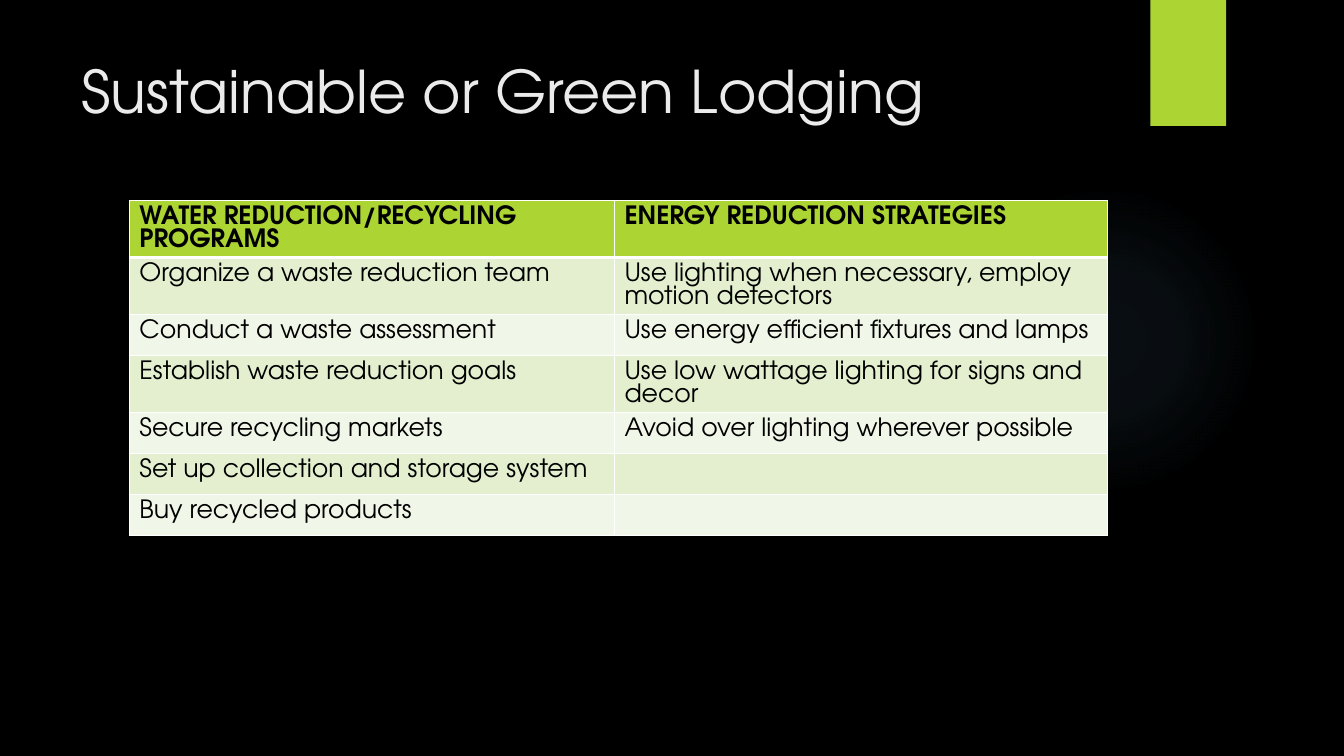
import pptx
import pptx.dml.color
import pptx.enum.shapes
import pptx.enum.text
import pptx.oxml
import pptx.oxml.ns
import pptx.util

Pt = pptx.util.Pt
FONT = "TeX Gyre Adventor"
LIME = "ACD433"
BANDS = ("E3EFCE", "F1F7E8")
GLOW_STOPS = ((0, 7), (36, 6), (69, 0))  # position and opacity, in percent
NAMESPACE = pptx.oxml.ns.nsdecls("a")

STRATEGIES = (
    ("WATER REDUCTION/RECYCLING PROGRAMS", "ENERGY REDUCTION STRATEGIES"),
    ("Organize a waste reduction team",
     "Use lighting when necessary, employ motion detectors"),
    ("Conduct a waste assessment", "Use energy efficient fixtures and lamps"),
    ("Establish waste reduction goals",
     "Use low wattage lighting for signs and decor"),
    ("Secure recycling markets", "Avoid over lighting wherever possible"),
    ("Set up collection and storage system", ""),
    ("Buy recycled products", ""),
)


def color(value):
    return pptx.dml.color.RGBColor.from_string(value)


def set_fill(item, value):
    item.fill.solid()
    item.fill.fore_color.rgb = color(value)


def add_text(paragraph, text, size, value, bold=False):
    run = paragraph.add_run()
    run.text = text
    run.font.name = FONT
    run.font.size = Pt(size)
    run.font.bold = bold
    run.font.color.rgb = color(value)


def add_shape(slide, kind, left, top, width, height, value):
    shape = slide.shapes.add_shape(kind, Pt(left), Pt(top), Pt(width), Pt(height))
    shape.shadow.inherit = False
    shape.line.fill.background()
    set_fill(shape, value)
    return shape


def add_glow(slide, left, top, diameter, value):
    oval = pptx.enum.shapes.MSO_SHAPE.OVAL
    shape = add_shape(slide, oval, left, top, diameter, diameter, value)
    stops = "".join(
        f'<a:gs pos="{position * 1000}"><a:srgbClr val="{value}">'
        f'<a:alpha val="{opacity * 1000}"/></a:srgbClr></a:gs>'
        for position, opacity in GLOW_STOPS)
    gradient = pptx.oxml.parse_xml(
        f'<a:gradFill {NAMESPACE}><a:gsLst>{stops}</a:gsLst><a:path path="circle">'
        '<a:fillToRect l="50000" t="50000" r="50000" b="50000"/></a:path></a:gradFill>')
    properties = shape.element.spPr
    properties.replace(properties.find(pptx.oxml.ns.qn("a:solidFill")), gradient)


def set_title(slide, text):
    title = slide.shapes.title
    title.left, title.top, title.width, title.height = Pt(51), Pt(35.5), Pt(741), Pt(77)
    frame = title.text_frame
    frame.word_wrap = True
    frame.auto_size = pptx.enum.text.MSO_AUTO_SIZE.NONE
    frame.vertical_anchor = pptx.enum.text.MSO_ANCHOR.TOP
    paragraph = frame.paragraphs[0]
    paragraph.alignment = pptx.enum.text.PP_ALIGN.LEFT
    add_text(paragraph, text, 42, "EBEBEB")


def set_borders(cell, widths):
    """Draw white borders; widths maps the sides L, R, T, B to points."""
    properties = cell._tc.get_or_add_tcPr()
    for index, (side, width) in enumerate(widths.items()):
        properties.insert(index, pptx.oxml.parse_xml(
            f'<a:ln{side} {NAMESPACE} w="{Pt(width)}"><a:solidFill>'
            f'<a:srgbClr val="FFFFFF"/></a:solidFill></a:ln{side}>'))


def add_strategy_table(slide, rows, left, top, column_widths, header_height, row_height):
    height = header_height + row_height * (len(rows) - 1)
    table = slide.shapes.add_table(
        len(rows), len(column_widths), Pt(left), Pt(top),
        Pt(sum(column_widths)), Pt(height)).table
    for column, width in zip(table.columns, column_widths):
        column.width = Pt(width)
    for row_index, texts in enumerate(rows):
        header = row_index == 0
        table.rows[row_index].height = Pt(header_height if header else row_height)
        for column_index, text in enumerate(texts):
            cell = table.cell(row_index, column_index)
            set_fill(cell, LIME if header else BANDS[(row_index - 1) % 2])
            set_borders(cell, {"L": 1, "R": 1, "T": 3 if row_index == 1 else 1,
                               "B": 3 if header else 1})
            if text:
                paragraph = cell.text_frame.paragraphs[0]
                add_text(paragraph, text, 18, "000000", bold=header)


def main():
    presentation = pptx.Presentation()
    presentation.slide_width, presentation.slide_height = Pt(960), Pt(540)
    slide = presentation.slides.add_slide(presentation.slide_layouts[5])
    set_fill(slide.background, "000000")

    # Backdrop
    add_glow(slide, 677.5, 131.75, 221.75, "7AC4F0")
    add_shape(slide, pptx.enum.shapes.MSO_SHAPE.RECTANGLE, 821.75, 0, 54, 90, LIME)

    # Content
    set_title(slide, "Sustainable or Green Lodging")
    add_strategy_table(slide, STRATEGIES, 92.4, 143.25, (346.5, 352.25), 20, 29.25)

    presentation.save("out.pptx")


if __name__ == "__main__":
    main()
